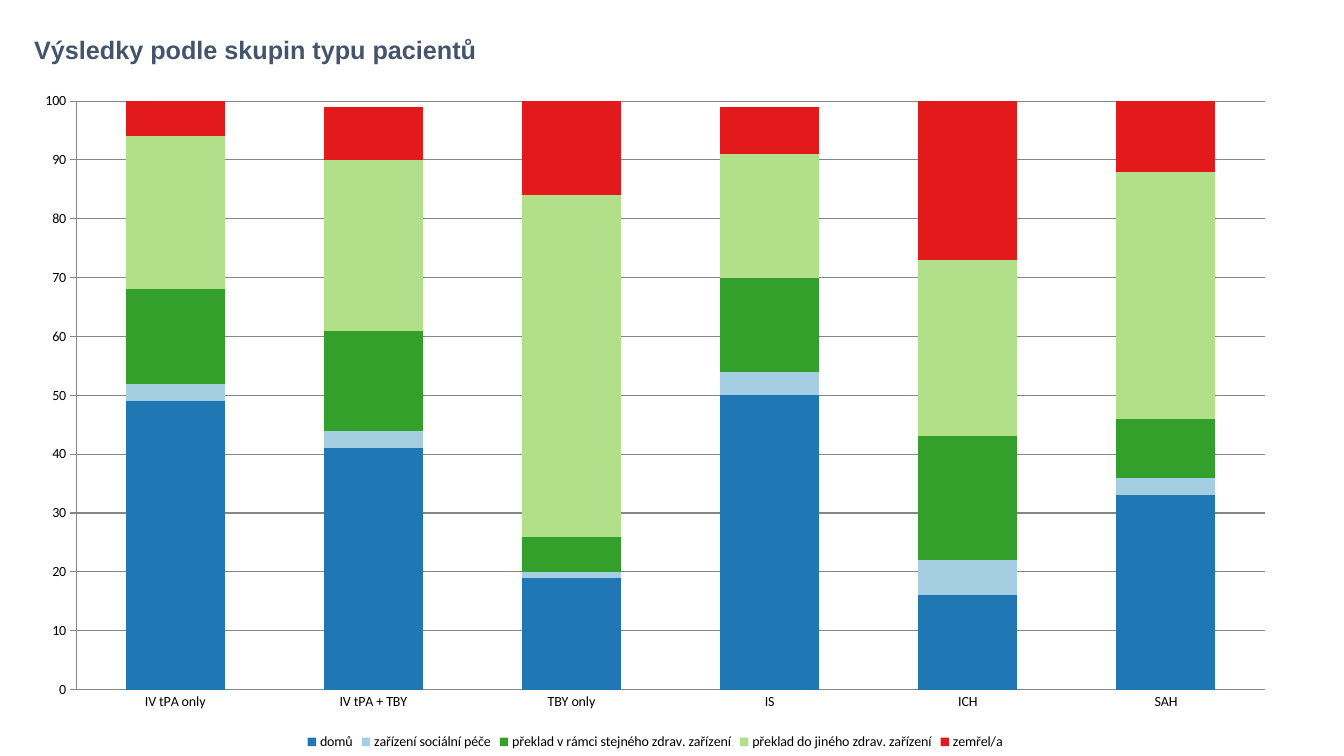
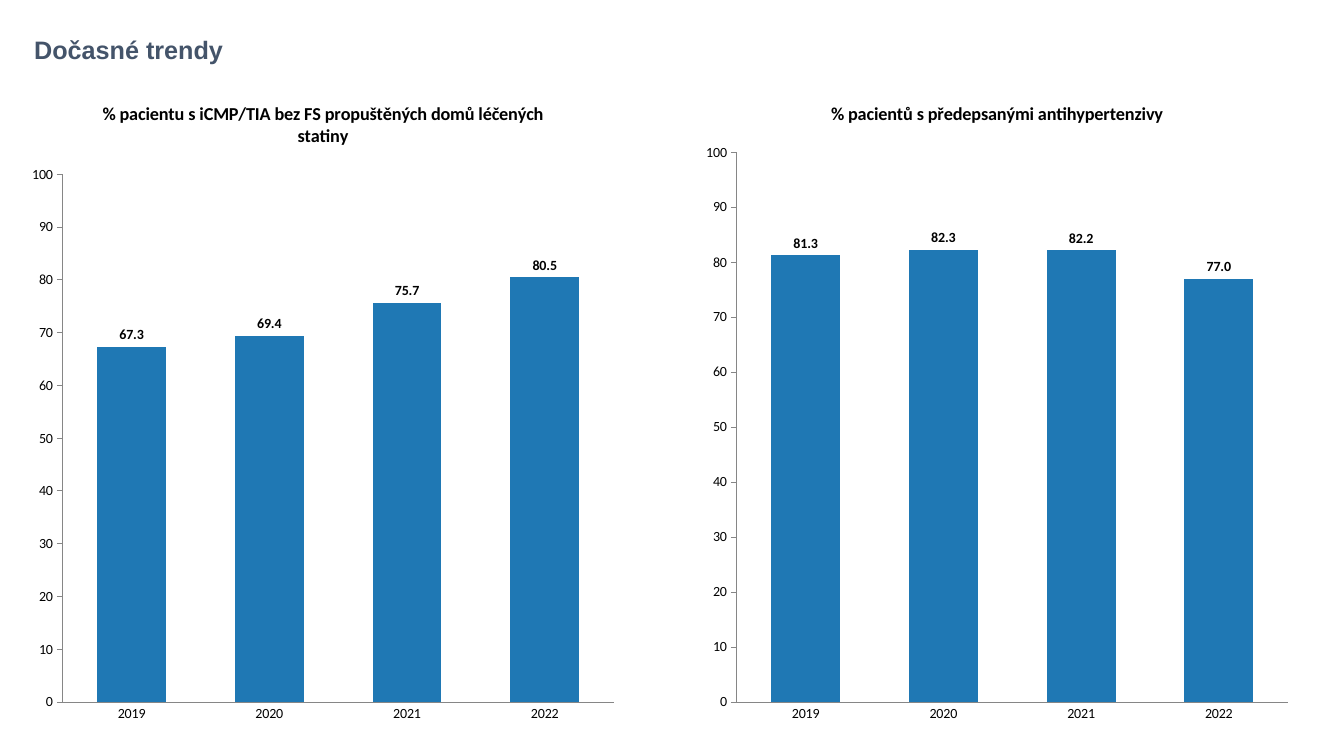
from pptx import Presentation
from pptx import util as u
from pptx.chart.data import CategoryChartData
from pptx.dml.color import RGBColor
from pptx.enum import chart as ch, text

PX = 9525  # EMU per px, slide is 1280 x 720 px
BLACK, SLATE, GREY = "000000", "44546A", "868686"
BLUE, PALE_BLUE, GREEN, PALE_GREEN, RED = "1F78B4", "A6CEE3", "33A02C", "B2DF8A", "E31A1C"


def rgb(color):
    return RGBColor.from_string(color)


def add_columns(s, kind, box, cats, series, grid=False):
    """Add a column chart with a 0-100 axis; series holds (name, color, values)."""
    data = CategoryChartData()
    data.categories = cats
    for name, _, values in series:
        data.add_series(name, values)
    chart = s.shapes.add_chart(kind, *(v * PX for v in box), data).chart
    chart.font.name, chart.font.size = "Calibri", u.Pt(18)
    chart.font.color.rgb = rgb(BLACK)
    chart.has_title = chart.has_legend = False

    plot = chart.plots[0]
    plot.gap_width = 100
    plot.vary_by_categories = False
    for ser, (_, color, _) in zip(plot.series, series):
        ser.format.fill.solid()
        ser.format.fill.fore_color.rgb = rgb(color)
        ser.invert_if_negative = False

    val = chart.value_axis
    val.minimum_scale, val.maximum_scale, val.major_unit = 0, 100, 10
    val.has_major_gridlines = grid
    if grid:
        val.major_gridlines.format.line.color.rgb = rgb(GREY)
    val.tick_labels.number_format = "0"
    val.tick_labels.number_format_is_linked = False
    for axis, tick in ((chart.category_axis, ch.XL_TICK_MARK.NONE), (val, ch.XL_TICK_MARK.OUTSIDE)):
        axis.major_tick_mark, axis.minor_tick_mark = tick, ch.XL_TICK_MARK.NONE
        axis.tick_labels.font.size = u.Pt(10)
        axis.format.line.color.rgb = rgb(GREY)
    return chart


prs = Presentation()
prs.slide_width, prs.slide_height = 1280 * PX, 720 * PX

# Slides with their titles
slides = []
for title in ("Výsledky podle skupin typu pacientů", "Dočasné trendy"):
    s = prs.slides.add_slide(prs.slide_layouts[6])
    tf = s.shapes.add_textbox(23 * PX, 14 * PX, 1050 * PX, 69 * PX).text_frame
    tf.word_wrap = True
    tf.vertical_anchor = text.MSO_ANCHOR.MIDDLE
    p = tf.paragraphs[0]
    p.text = title
    p.line_spacing = 0.9
    p.font.name, p.font.size, p.font.bold = "Arial", u.Pt(18), True
    p.font.color.rgb = rgb(SLATE)
    slides.append(s)
outcome_slide, trend_slide = slides

# Outcomes by patient group
groups = ["IV tPA only", "IV tPA + TBY", "TBY only", "IS", "ICH", "SAH"]
outcomes = [
    ("domů", BLUE, (49, 41, 19, 50, 16, 33)),
    ("zařízení sociální péče", PALE_BLUE, (3, 3, 1, 4, 6, 3)),
    ("překlad v rámci stejného zdrav. zařízení", GREEN, (16, 17, 6, 16, 21, 10)),
    ("překlad do jiného zdrav. zařízení", PALE_GREEN, (26, 29, 58, 21, 30, 42)),
    ("zemřel/a", RED, (7, 9, 16, 8, 27, 12)),
]
chart = add_columns(outcome_slide, ch.XL_CHART_TYPE.COLUMN_STACKED, (19, 76, 1210, 642),
                    groups, outcomes, grid=True)
chart.plots[0].overlap = 100
chart.has_legend = True
chart.legend.position = ch.XL_LEGEND_POSITION.BOTTOM
chart.legend.include_in_layout = False
chart.legend.font.size = u.Pt(10)

# Yearly trends, side by side
years = ["2019", "2020", "2021", "2022"]
trends = [
    (19, "% pacientu s iCMP/TIA bez FS propuštěných domů léčených statiny", (67.3, 69.4, 75.7, 80.5)),
    (661, "% pacientů s předepsanými antihypertenzivy", (81.3, 82.3, 82.2, 77)),
]
for left, title, values in trends:
    chart = add_columns(trend_slide, ch.XL_CHART_TYPE.COLUMN_CLUSTERED, (left, 76, 577, 624),
                        years, [("Series 1", BLUE, values)])
    chart.has_title = True
    chart.chart_title.include_in_layout = False
    p = chart.chart_title.text_frame.paragraphs[0]
    p.text = title
    p.font.size, p.font.bold = u.Pt(13), True

    plot = chart.plots[0]
    plot.has_data_labels = True
    labels = plot.data_labels
    labels.show_value = True
    labels.position = ch.XL_LABEL_POSITION.OUTSIDE_END
    labels.number_format, labels.number_format_is_linked = "0.0", False
    labels.font.size, labels.font.bold = u.Pt(10), True

prs.save("out.pptx")
